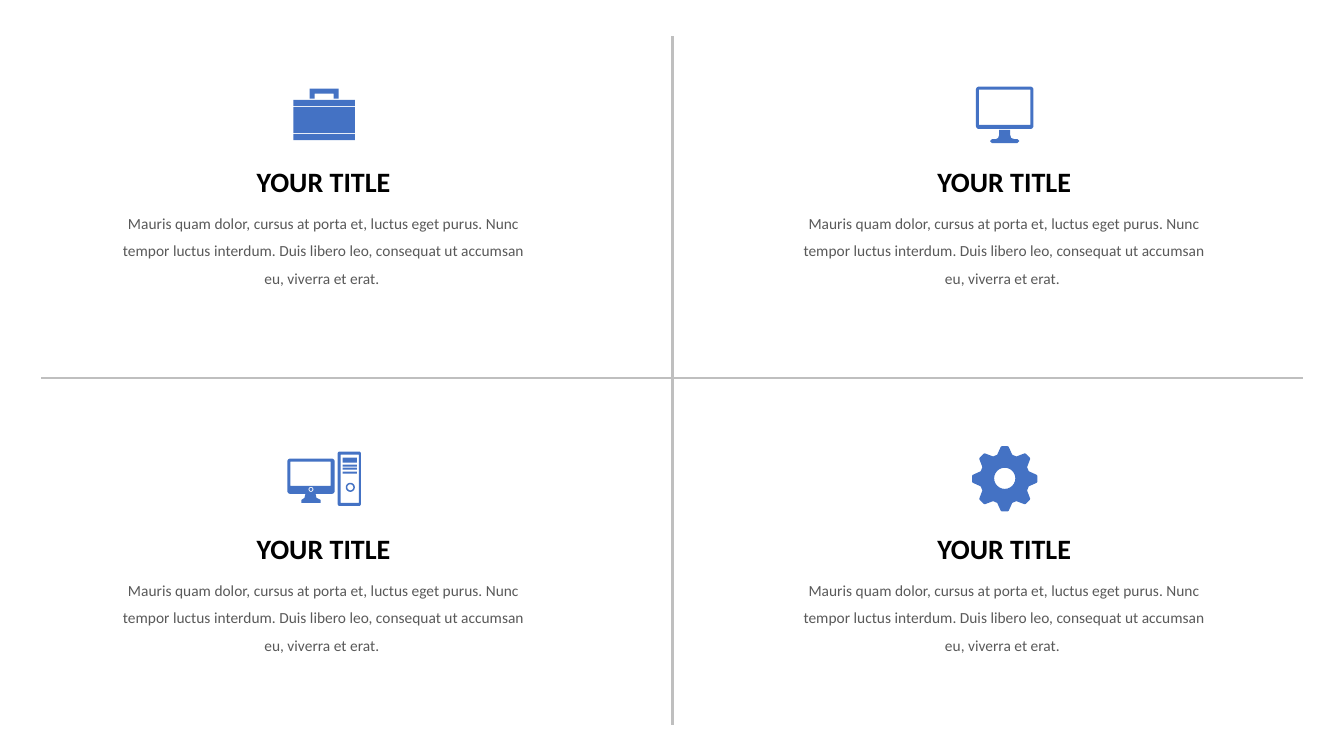
from dataclasses import dataclass
from math import cos, pi, radians, sin

from pptx import Presentation
from pptx.dml.color import RGBColor
from pptx.enum.shapes import MSO_CONNECTOR
from pptx.enum.text import MSO_AUTO_SIZE, PP_ALIGN
from pptx.oxml.ns import qn
from pptx.util import Inches, Pt

STRAIGHT = MSO_CONNECTOR.STRAIGHT
FIT_SHAPE = MSO_AUTO_SIZE.SHAPE_TO_FIT_TEXT
CENTER = PP_ALIGN.CENTER


@dataclass(frozen=True)
class Theme:
    font: str = "Calibri"
    title_size: Pt = Pt(20)
    body_size: Pt = Pt(11)
    title_color: RGBColor = RGBColor(0, 0, 0)
    body_color: RGBColor = RGBColor(0x59, 0x59, 0x59)
    icon_color: RGBColor = RGBColor(0x44, 0x72, 0xC4)
    divider_color: RGBColor = RGBColor(0xBF, 0xBF, 0xBF)
    divider_width: Pt = Pt(1.5)


THEME = Theme()
BODY = ("Mauris quam dolor, cursus at porta et, luctus eget purus. "
        "Nunc tempor luctus interdum. Duis libero leo, consequat ut "
        "accumsan eu, viverra et erat. ")
BODY_WIDTH, BODY_HEIGHT = 4.32, 0.87
TITLE_WIDTH, TITLE_HEIGHT = 1.47, 0.4
COLUMN_CENTERS = (3.21, 9.96)
TITLE_TOPS = (1.6, 5.24)


def rounded_box(left, top, right, bottom, radius=0):
    """Return the outline points; a radius of half the side gives a circle."""
    if not radius:
        return [(left, top), (right, top), (right, bottom), (left, bottom)]
    corners = [(right - radius, bottom - radius), (left + radius, bottom - radius),
               (left + radius, top + radius), (right - radius, top + radius)]
    steps = 6
    return [(x + radius * cos((quarter + step / steps) * pi / 2),
             y + radius * sin((quarter + step / steps) * pi / 2))
            for quarter, (x, y) in enumerate(corners) for step in range(steps + 1)]


def add_centered_text(text, center, top, width, height, size, color):
    box = slide.shapes.add_textbox(Inches(center - width / 2), Inches(top),
                                   Inches(width), Inches(height))
    frame = box.text_frame
    frame.margin_left = frame.margin_right = Inches(0.07)
    frame.margin_top = frame.margin_bottom = Inches(0.03)
    frame.auto_size = FIT_SHAPE
    frame.word_wrap = True
    paragraph = frame.paragraphs[0]
    paragraph.text = text
    paragraph.alignment = CENTER
    paragraph.font.name = THEME.font
    paragraph.font.size = size
    paragraph.font.color.rgb = color
    return frame


prs = Presentation()
prs.slide_width, prs.slide_height = Inches(13.33), Inches(7.5)
slide = prs.slides.add_slide(prs.slide_layouts[6])

# Dividers
for ends in [(6.67, 0.36, 6.67, 7.19), (0.41, 3.75, 12.92, 3.75)]:
    divider = slide.shapes.add_connector(STRAIGHT, *map(Inches, ends))
    divider.line.color.rgb = THEME.divider_color
    divider.line.width = THEME.divider_width
    properties = divider._element.spPr
    properties.append(properties.makeelement(qn("a:effectLst"), {}))

# Quadrant texts
for top in TITLE_TOPS:
    for center in COLUMN_CENTERS:
        heading = add_centered_text("YOUR TITLE", center, top, TITLE_WIDTH, TITLE_HEIGHT,
                                    THEME.title_size, THEME.title_color)
        heading.word_wrap = False
        heading.paragraphs[0].font.bold = True
        body = add_centered_text(BODY, center, top + TITLE_HEIGHT, BODY_WIDTH, BODY_HEIGHT,
                                 THEME.body_size, THEME.body_color)
        body.paragraphs[0].line_spacing = 1.5

# Icons: each is a list of outlines, where an inner outline cuts a hole
briefcase = [
    [(3.07, 0.98), (3.07, 0.88), (3.36, 0.88), (3.36, 0.98),
     (3.31, 0.98), (3.31, 0.93), (3.12, 0.93), (3.12, 0.98)],
    *[rounded_box(2.91, top, 3.52, bottom)
      for top, bottom in [(0.99, 1.05), (1.06, 1.32), (1.33, 1.39)]],
]

monitor = [
    rounded_box(9.68, 0.86, 10.25, 1.28, 0.03),
    rounded_box(9.71, 0.89, 10.22, 1.24),
    [(9.91, 1.29), (10.02, 1.29), (10.02, 1.34), (10.03, 1.37), (10.06, 1.38),
     (10.09, 1.38), (10.11, 1.4), (10.09, 1.42), (9.84, 1.42), (9.82, 1.4),
     (9.84, 1.38), (9.88, 1.38), (9.9, 1.37), (9.91, 1.34)],
]

desktop = [
    rounded_box(2.85, 4.55, 3.32, 4.9, 0.03),
    rounded_box(2.88, 4.58, 3.28, 4.82),
    rounded_box(3.06, 4.83, 3.11, 4.88, 0.025),
    rounded_box(3.07, 4.84, 3.1, 4.87, 0.015),
    [(3.03, 4.9), (3.13, 4.9), (3.14, 4.94), (3.18, 4.96),
     (3.18, 4.99), (2.99, 4.99), (2.99, 4.96), (3.02, 4.94)],
    rounded_box(3.35, 4.48, 3.58, 5.02, 0.02),
    rounded_box(3.38, 4.51, 3.56, 4.99),
    *[rounded_box(3.4, top, 3.54, bottom)
      for top, bottom in [(4.54, 4.59), (4.61, 4.63), (4.64, 4.66), (4.68, 4.7)]],
    rounded_box(3.43, 4.79, 3.52, 4.88, 0.045),
    rounded_box(3.445, 4.805, 3.505, 4.865, 0.03),
]

GEAR_X, GEAR_Y = 9.965, 4.75
TOOTH = [(-17.4, 0.25), (-7, 0.32), (-5, 0.325), (5, 0.325), (7, 0.32), (17.4, 0.25)]
gear = [
    [(GEAR_X + reach * cos(radians(45 * tooth + turn)),
      GEAR_Y + reach * sin(radians(45 * tooth + turn)))
     for tooth in range(8) for turn, reach in TOOTH],
    rounded_box(9.86, 4.64, 10.07, 4.85, 0.105),
]

for outlines in (monitor, gear, desktop, briefcase):
    outlines = [[(Inches(x), Inches(y)) for x, y in outline] for outline in outlines]
    builder = slide.shapes.build_freeform(*outlines[0][0])
    for outline in outlines:
        builder.move_to(*outline[0])
        builder.add_line_segments(outline[1:], close=True)
    icon = builder.convert_to_shape()
    icon.shadow.inherit = False
    icon.fill.solid()
    icon.fill.fore_color.rgb = THEME.icon_color
    icon.line.fill.background()

prs.save("out.pptx")
